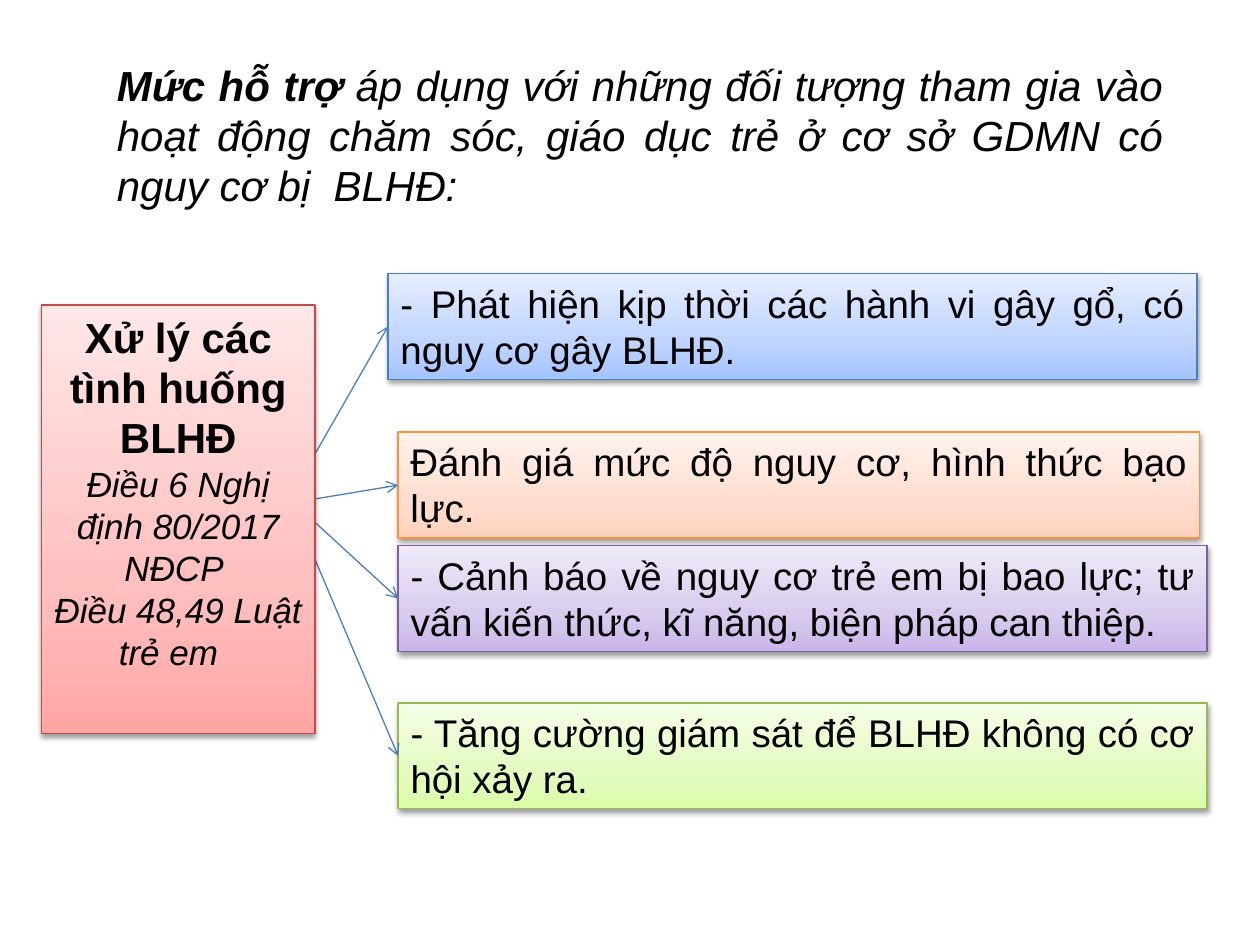
"""Build the slide on support measures for handling violence in preschools."""
from copy import deepcopy
from lxml.etree import SubElement
from pptx import Presentation
from pptx.dml.color import RGBColor
from pptx.enum.shapes import MSO_CONNECTOR, MSO_SHAPE
from pptx.enum.text import MSO_ANCHOR, MSO_AUTO_SIZE, PP_ALIGN
from pptx.oxml.ns import qn
from pptx.util import Inches, Pt

THEME = {
    "font": "Arial", "ink": "000000", "head": 24, "body": 22, "note": 20, "rule": 0.75,
    "blue": ("4B7EBC", "A4C4FF", "BFD4FF", "E6EEFF"),
    "orange": ("F69240", "FFD2BD", "FFDED0", "FFF2ED"),
    "purple": ("7D60A0", "C9B5E8", "D8CBEE", "F0EAF9"),
    "green": ("98B955", "DAFDA7", "E4FCC2", "F5FFE7"),
    "red": ("BF4C48", "FFA6A5", "FFC0BF", "FFE7E7"),
}


def write(shape, paras, align):
    """Fill a shape with paragraphs of (text, size, bold, italic) runs."""
    frame = shape.text_frame
    frame.word_wrap = True
    frame.auto_size = MSO_AUTO_SIZE.SHAPE_TO_FIT_TEXT
    frame.vertical_anchor = MSO_ANCHOR.TOP
    for i, runs in enumerate(paras):
        para = frame.add_paragraph() if i else frame.paragraphs[0]
        para.alignment = align
        for text, size, bold, italic in runs:
            run = para.add_run()
            run.text = text
            font = run.font
            font.name, font.size = THEME["font"], Pt(THEME[size])
            font.bold, font.italic = bold, italic
            font.color.rgb = RGBColor.from_string(THEME["ink"])


def panel(box, tint, paras, align):
    """Add a shaded rectangle with a soft shadow and text."""
    shape = slide.shapes.add_shape(MSO_SHAPE.RECTANGLE, *map(Inches, box))
    edge, *shades = THEME[tint]
    shape.line.color.rgb = RGBColor.from_string(edge)
    shape.line.width = Pt(THEME["rule"])
    fill = shape.fill
    fill.gradient()
    fill.gradient_angle = 90
    props = shape._element.spPr
    first = props.find(".//" + qn("a:gs"))
    first.addnext(deepcopy(first))
    for stop, place, shade in zip(fill.gradient_stops, (0, 0.35, 1), shades):
        stop.position = place
        stop.color.rgb = RGBColor.from_string(shade)
    shape.shadow.inherit = False
    shadow = SubElement(props.find(qn("a:effectLst")), qn("a:outerShdw"),
                        blurRad=str(Pt(3.1)), dist=str(Pt(1.6)), dir="5400000", rotWithShape="0")
    color = SubElement(shadow, qn("a:srgbClr"), val=THEME["ink"])
    SubElement(color, qn("a:alpha"), val="38000")
    write(shape, paras, align)


deck = Presentation()
deck.slide_width, deck.slide_height = Inches(10), Inches(7.5)
slide = deck.slides.add_slide(deck.slide_layouts[6])

title = slide.shapes.add_textbox(*map(Inches, (0.83, 0.42, 8.5, 1.31)))
write(title, [[
    ("Mức hỗ trợ ", "head", True, True),
    ("áp dụng với những đối tượng tham gia vào hoạt động chăm sóc, giáo dục trẻ "
     "ở cơ sở GDMN có nguy cơ bị  BLHĐ:", "head", False, True),
]], PP_ALIGN.JUSTIFY)

steps = [
    (3.08, 2.17, 6.42, "blue", (2.33, 3.9),
     "- Phát hiện kịp thời các hành vi gây gổ, có nguy cơ gây BLHĐ. "),
    (3.16, 3.43, 6.36, "orange", (2.32, 3.99),
     "Đánh giá mức độ nguy cơ, hình thức bạo lực."),
    (3.16, 4.33, 6.42, "purple", (2.33, 3.99),
     "- Cảnh báo về nguy cơ trẻ em bị bao lực; tư vấn kiến thức, kĩ năng, biện pháp can thiệp. "),
    (3.16, 5.58, 6.42, "green", (2.31, 3.99),
     "- Tăng cường giám sát để BLHĐ không có cơ hội xảy ra."),
]
high = 0.84
for left, top, width, tint, start, text in steps:
    panel((left, top, width, high), tint, [[(text, "body", False, False)]], PP_ALIGN.JUSTIFY)
    ends = (*start, left, top + high / 2)
    arrow = slide.shapes.add_connector(MSO_CONNECTOR.STRAIGHT, *map(Inches, ends))
    arrow.line.color.rgb = RGBColor.from_string(THEME["blue"][0])
    arrow.line.width = Pt(THEME["rule"])
    SubElement(arrow.line._get_or_add_ln(), qn("a:tailEnd"), type="arrow")
    SubElement(arrow._element.spPr, qn("a:effectLst"))

panel((0.33, 2.42, 2.17, 3.4), "red", [
    [("Xử lý các tình huống BLHĐ", "head", True, False)],
    [("Điều 6 Nghị định 80/2017 NĐCP ", "note", False, True)],
    [("Điều 48,49 Luật trẻ em  ", "note", False, True)],
], PP_ALIGN.CENTER)

deck.save("out.pptx")
